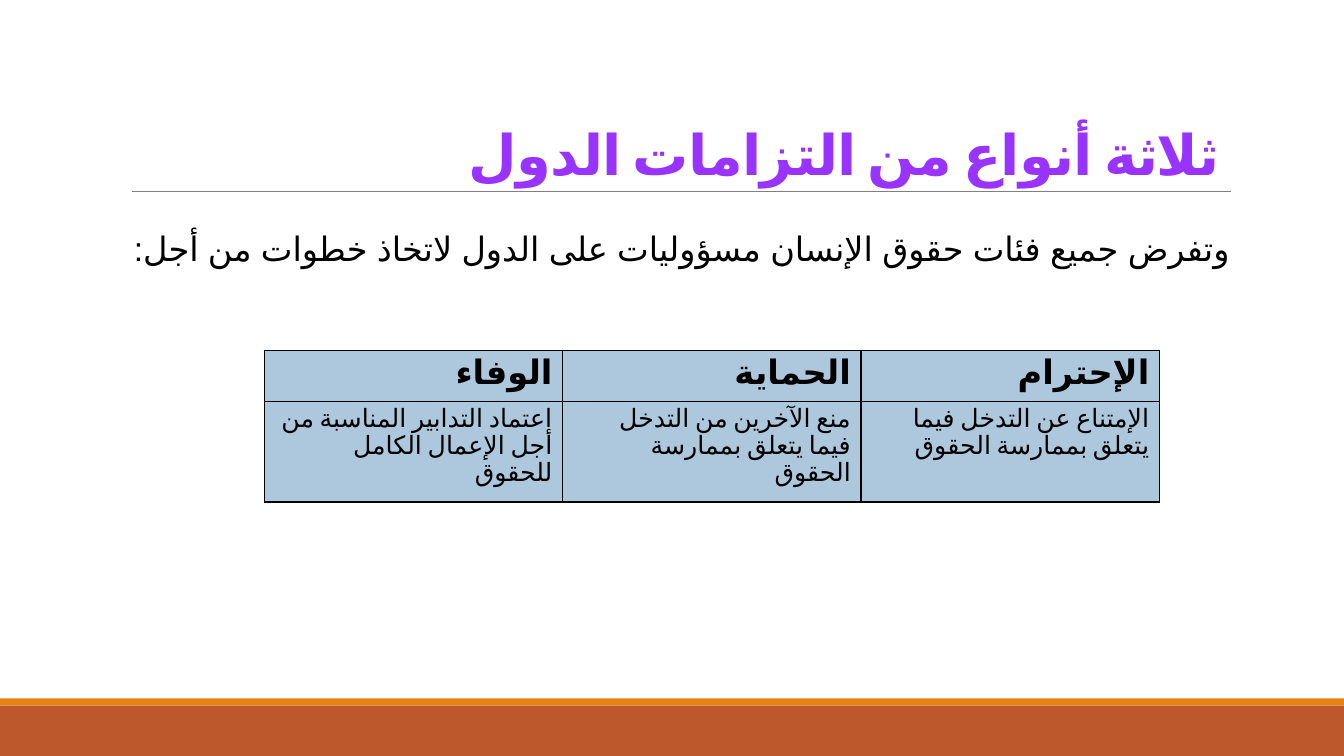
"""Build a slide on the three kinds of state obligations."""
import pptx
import pptx.dml.color
import pptx.enum.shapes
import pptx.enum.text
import pptx.oxml
import pptx.oxml.ns
import pptx.util
from lxml import etree

Inches = pptx.util.Inches
Pt = pptx.util.Pt
RGBColor = pptx.dml.color.RGBColor
Anchor = pptx.enum.text.MSO_ANCHOR
qn = pptx.oxml.ns.qn

BLACK = RGBColor(0x00, 0x00, 0x00)
PURPLE = RGBColor(0x99, 0x33, 0xFF)
GRAY = RGBColor(0x80, 0x80, 0x80)
RUST = RGBColor(0xBD, 0x58, 0x2C)
ORANGE = RGBColor(0xE4, 0x83, 0x12)
BLUE = RGBColor(0xAD, 0xC8, 0xDD)

TITLE = "ثلاثة أنواع من التزامات الدول"
INTRO = "وتفرض جميع فئات حقوق الإنسان مسؤوليات على الدول لاتخاذ خطوات من أجل:"
DUTIES = [
    ["الوفاء", "الحماية", "الإحترام"],
    [
        "اعتماد التدابير المناسبة من أجل الإعمال الكامل للحقوق",
        "منع الآخرين من التدخل فيما يتعلق بممارسة الحقوق",
        "الإمتناع عن التدخل فيما يتعلق بممارسة الحقوق",
    ],
]
HEADS = {"size": Pt(24), "name": "Calibri", "bold": True}
NOTES = {"size": Pt(18), "name": "Calibri", "bold": False}


def assign(item, values):
    for key, value in values.items():
        setattr(item, key, value)


def write(frame, text, font, color=BLACK, lead=0.9, track=0):
    para = frame.paragraphs[0]
    assign(para, {"alignment": pptx.enum.text.PP_ALIGN.RIGHT, "line_spacing": lead})
    para._p.get_or_add_pPr().set("rtl", "1")
    run = para.add_run()
    run.text = text
    assign(run.font, font)
    run.font.color.rgb = color
    props = run._r.get_or_add_rPr()
    props.set("lang", "ar-SA")
    props.set("spc", str(track))
    etree.SubElement(props, qn("a:cs"), typeface=font["name"])


def add_text(slide, box, text, font, layout, **style):
    frame = slide.shapes.add_textbox(*map(Inches, box)).text_frame
    assign(frame, {"word_wrap": True, **layout})
    write(frame, text, font, **style)


def add_band(slide, top, height, color):
    kind = pptx.enum.shapes.MSO_SHAPE.RECTANGLE
    band = slide.shapes.add_shape(kind, 0, Inches(top), Inches(13.33), Inches(height))
    band.shadow.inherit = False
    band.fill.solid()
    band.fill.fore_color.rgb = color
    band.line.fill.background()


def add_rule(slide):
    kind = pptx.enum.shapes.MSO_CONNECTOR.STRAIGHT
    ends = map(Inches, (1.31, 1.9, 12.21, 1.9))
    rule = slide.shapes.add_connector(kind, *ends)
    rule.line.color.rgb = GRAY
    rule.line.width = Pt(0.5)
    etree.SubElement(rule._element.spPr, qn("a:effectLst"))


def add_edges(cell):
    props = cell._tc.get_or_add_tcPr()
    for side in ("L", "R", "T", "B"):
        edge = etree.SubElement(props, qn(f"a:ln{side}"), w=str(Pt(1)))
        fill = etree.SubElement(edge, qn("a:solidFill"))
        etree.SubElement(fill, qn("a:srgbClr"), val=str(BLACK))


def add_grid(slide):
    box = map(Inches, (2.62, 3.48, 8.89, 1.5))
    table = slide.shapes.add_table(2, 3, *box).table
    assign(table, {"first_row": False, "horz_banding": False})
    for col in table.columns:
        col.width = Inches(2.96)
    formats = [(0.5, HEADS), (1, NOTES)]
    for row, texts, (height, font) in zip(table.rows, DUTIES, formats):
        row.height = Inches(height)
        for cell, text in zip(row.cells, texts):
            add_edges(cell)
            cell.fill.solid()
            cell.fill.fore_color.rgb = BLUE
            write(cell.text_frame, text, font, lead=0.87)


def main():
    deck = pptx.Presentation()
    assign(deck, {"slide_width": Inches(13.33), "slide_height": Inches(7.5)})
    slide = deck.slides.add_slide(deck.slide_layouts[6])
    add_band(slide, 7, 0.5, RUST)
    add_band(slide, 6.93, 0.07, ORANGE)
    add_rule(slide)
    add_text(
        slide, (1.2, 0.31, 11, 1.59), TITLE,
        {"size": Pt(40), "name": "Calibri", "bold": True},
        {"vertical_anchor": Anchor.BOTTOM},
        color=PURPLE, lead=0.85, track=-50,
    )
    add_text(
        slide, (1.2, 2.26, 11, 0.46), INTRO,
        {"size": Pt(24), "name": "Arial"},
        {"margin_left": 0, "margin_right": 0},
    )
    add_grid(slide)
    deck.save("out.pptx")


if __name__ == "__main__":
    main()
